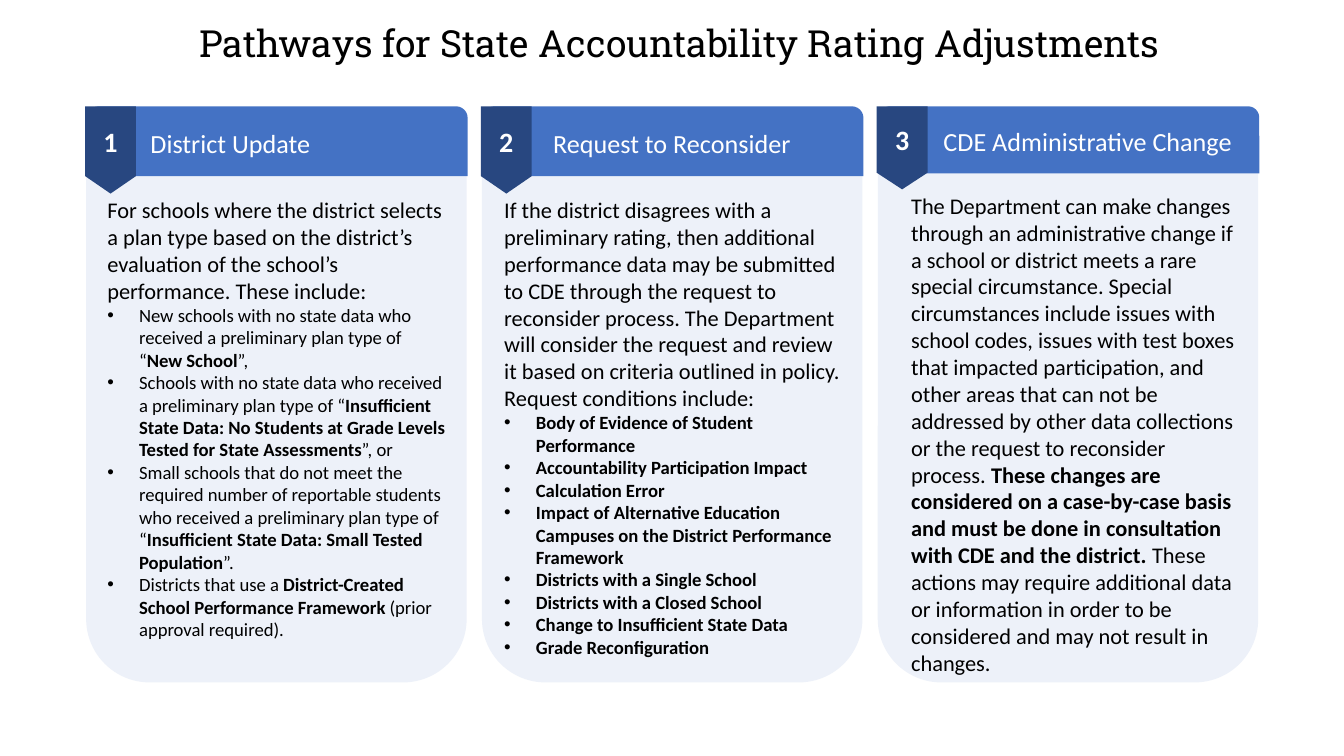
from pptx import Presentation
from pptx.dml.color import RGBColor
from pptx.enum.shapes import MSO_SHAPE
from pptx.enum.text import MSO_ANCHOR, PP_ALIGN
from pptx.oxml.ns import qn
from pptx.util import Cm, Pt
from lxml.etree import SubElement

BLACK = RGBColor(0x00, 0x00, 0x00)
WHITE = RGBColor(0xFF, 0xFF, 0xFF)
PALE_BLUE = RGBColor(0xED, 0xF1, 0xF9)
BLUE = RGBColor(0x44, 0x72, 0xC4)
NAVY = RGBColor(0x28, 0x47, 0x80)

COLUMN_LEFT = 1.63
COLUMN_PITCH = 7.48
CARD_WIDTH = 7.19
CARD_TOP = 2.01
CARD_BOTTOM = 12.9

pathways = [
    {
        "title": "District Update", "title_inset": 1.13,
        "header_height": 1.32, "tab_height": 1.65,
        "body": (1.85, 3.61, 6.78, 8.66),
        "intro": [("For schools where the district selects a plan type based on the district’s "
                   "evaluation of the school’s performance. These include:", False)],
        "bullets": [
            [("New schools with no state data who received a preliminary plan type of “", False),
             ("New School", True), ("”,", False)],
            [("Schools with no state data who received a preliminary plan type of “", False),
             ("Insufficient State Data: No Students at Grade Levels Tested for State Assessments", True),
             ("”, or", False)],
            [("Small schools that do not meet the required number of reportable students "
              "who received a preliminary plan type of “", False),
             ("Insufficient State Data: Small Tested Population", True), ("”.", False)],
            [("Districts that use a ", False),
             ("District-Created School Performance Framework ", True),
             ("(prior approval required).", False)],
        ],
    },
    {
        "title": "Request to Reconsider", "title_inset": 1.26,
        "header_height": 1.32, "tab_height": 1.65,
        "body": (9.35, 3.61, 6.76, 8.99),
        "intro": [("If the district disagrees with a preliminary rating, then additional performance "
                   "data may be submitted to CDE through the request to reconsider process. "
                   "The Department will consider the request and review it based on criteria "
                   "outlined in policy. Request conditions include:", False)],
        "bullets": [[(condition, True)] for condition in (
            "Body of Evidence of Student Performance",
            "Accountability Participation Impact",
            "Calculation Error",
            "Impact of Alternative Education Campuses on the District Performance Framework",
            "Districts with a Single School",
            "Districts with a Closed School",
            "Change to Insufficient State Data",
            "Grade Reconfiguration",
        )],
    },
    {
        "title": "CDE Administrative Change", "title_inset": 1.16,
        "header_height": 1.27, "tab_height": 1.57,
        "body": (17.04, 3.53, 6.55, 9.42),
        "intro": [
            ("The Department can make changes through an administrative change if a school or "
             "district meets a rare special circumstance. Special circumstances include issues with "
             "school codes, issues with test boxes that impacted participation, and other areas that "
             "can not be addressed by other data collections or the request to reconsider process. ", False),
            ("These changes are considered on a case-by-case basis and must be done in "
             "consultation with CDE and the district. ", True),
            ("These actions may require additional data or information in order to be considered "
             "and may not result in changes.", False),
        ],
        "bullets": [],
    },
]


def add_panel(shapes, kind, left, top, width, height, color):
    shape = shapes.add_shape(kind, Cm(left), Cm(top), Cm(width), Cm(height))
    shape.shadow.inherit = False
    shape.fill.solid()
    shape.fill.fore_color.rgb = color
    shape.line.fill.background()
    frame = shape.text_frame
    frame.word_wrap = True
    frame.vertical_anchor = MSO_ANCHOR.MIDDLE
    frame.margin_left = frame.margin_right = Cm(0.18)
    frame.margin_top = frame.margin_bottom = Cm(0.1)
    return shape


def add_runs(paragraph, runs, size, color, font="Calibri"):
    for text, bold in runs:
        run = paragraph.add_run()
        run.text = text
        run.font.name = font
        run.font.size = Pt(size)
        run.font.bold = bold
        run.font.color.rgb = color


presentation = Presentation()
presentation.slide_width = Cm(25.4)
presentation.slide_height = Cm(14.29)
slide = presentation.slides.add_slide(presentation.slide_layouts[6])

title_box = slide.shapes.add_textbox(Cm(0.53), Cm(0.13), Cm(24.64), Cm(1.37))
title_frame = title_box.text_frame
title_frame.word_wrap = True
title_frame.margin_top = title_frame.margin_bottom = Cm(0.25)
title_paragraph = title_frame.paragraphs[0]
title_paragraph.alignment = PP_ALIGN.CENTER
add_runs(title_paragraph, [("Pathways for State Accountability Rating Adjustments", False)],
         20, BLACK, "Roboto Slab")

for index, pathway in enumerate(pathways):
    left = COLUMN_LEFT + index * COLUMN_PITCH
    shapes = slide.shapes.add_group_shape().shapes

    card = add_panel(shapes, MSO_SHAPE.ROUNDED_RECTANGLE, left, CARD_TOP + 0.13,
                     CARD_WIDTH, CARD_BOTTOM - CARD_TOP - 0.13, PALE_BLUE)
    card.adjustments[0] = 0.167

    header = add_panel(shapes, MSO_SHAPE.ROUND_2_SAME_RECTANGLE, left + 0.02, CARD_TOP,
                       CARD_WIDTH, pathway["header_height"], BLUE)
    header.adjustments[0] = 0.167
    header.text_frame.margin_left = Cm(pathway["title_inset"])
    header_paragraph = header.text_frame.paragraphs[0]
    header_paragraph.alignment = PP_ALIGN.LEFT
    add_runs(header_paragraph, [(pathway["title"], False)], 14, WHITE)

    number_tab = add_panel(shapes, MSO_SHAPE.FLOWCHART_OFFPAGE_CONNECTOR, left - 0.02, CARD_TOP,
                           0.96, pathway["tab_height"], NAVY)
    number_paragraph = number_tab.text_frame.paragraphs[0]
    number_paragraph.alignment = PP_ALIGN.CENTER
    add_runs(number_paragraph, [(str(index + 1), True)], 15, WHITE)

    body = shapes.add_textbox(*[Cm(length) for length in pathway["body"]])
    body_frame = body.text_frame
    body_frame.word_wrap = True
    body_frame.margin_left = body_frame.margin_right = Cm(0.18)
    body_frame.margin_top = body_frame.margin_bottom = Cm(0.1)
    add_runs(body_frame.paragraphs[0], pathway["intro"], 12, BLACK)
    for runs in pathway["bullets"]:
        paragraph = body_frame.add_paragraph()
        properties = paragraph._p.get_or_add_pPr()
        properties.set("marL", str(Cm(0.6)))
        properties.set("indent", str(-Cm(0.6)))
        SubElement(properties, qn("a:buFont")).set("typeface", "Arial")
        SubElement(properties, qn("a:buChar")).set("char", "•")
        add_runs(paragraph, runs, 10, BLACK)

presentation.save("out.pptx")
